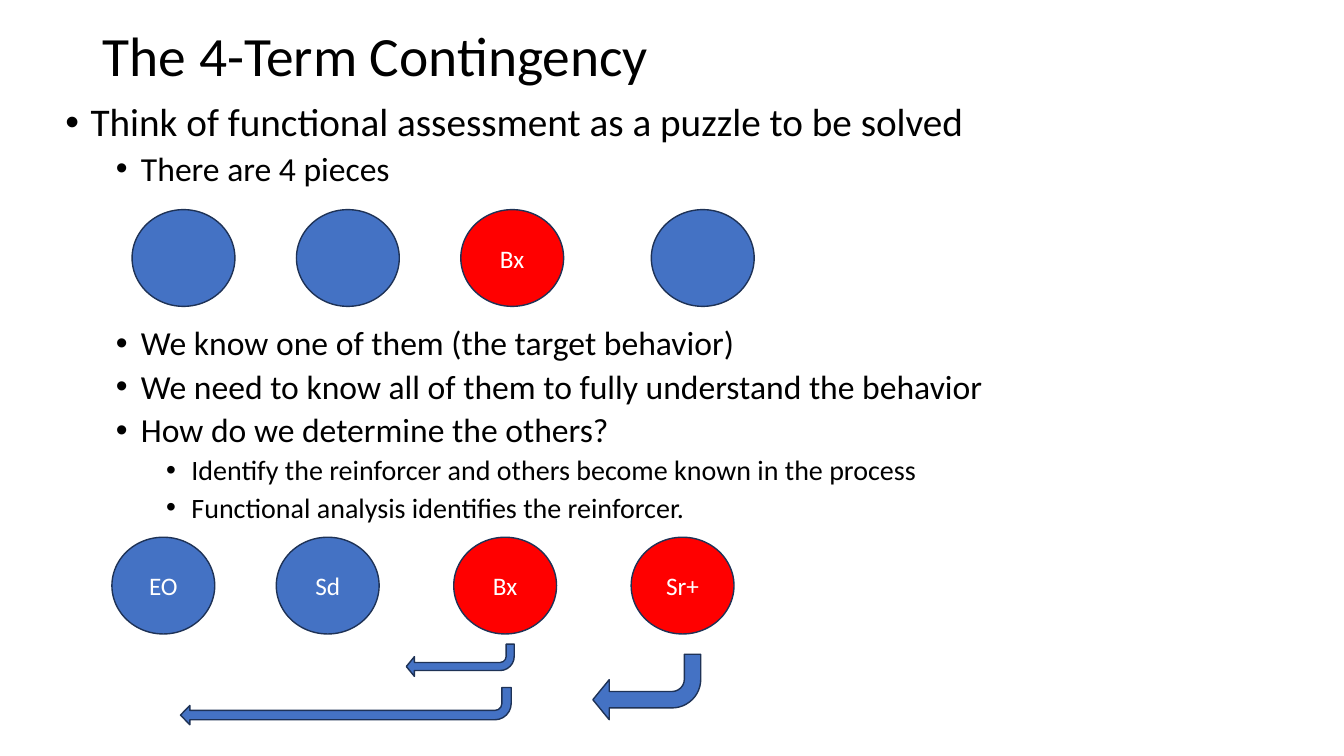
from lxml.etree import SubElement
from pptx import Presentation
from pptx.dml.color import RGBColor
from pptx.enum.shapes import MSO_SHAPE
from pptx.enum.text import MSO_ANCHOR, MSO_AUTO_SIZE, PP_ALIGN
from pptx.oxml.ns import qn
from pptx.util import Inches, Pt

HUES = {"text": "000000", "white": "FFFFFF", "blue": "4472C4",
        "red": "FF0000", "edge": "1E3256"}
SIZES = [28, 24, 20]  # by outline level
GAP = 99  # space before, in points, that clears the upper circles

# level, space before, wording
POINTS = [
    (0, 0, "Think of functional assessment as a puzzle to be solved"),
    (1, 5, "There are 4 pieces"),
    (1, GAP, "We know one of them (the target behavior)"),
    (1, 5, "We need to know all of them to fully understand the behavior"),
    (1, 5, "How do we determine the others?"),
    (2, 5, "Identify the reinforcer and others become known in the process"),
    (2, 5, "Functional analysis identifies the reinforcer."),
]
# offset from the row's left, label, fill
PUZZLE = [(0, "", "blue"), (1.63, "", "blue"), (3.26, "Bx", "red"),
          (5.15, "", "blue")]
SOLVED = [(0, "EO", "blue"), (1.63, "Sd", "blue"), (3.39, "Bx", "red"),
          (5.15, "Sr+", "red")]
# offset from the area's corner, size, second adjustment
ARROWS = [(4.09, 0.1, 1.07, 0.65, 0.306), (2.24, 0, 1.07, 0.32, 0.306),
          (0, 0.43, 3.28, 0.37, 0.26)]


def color(name):
    return RGBColor.from_string(HUES[name])


def add_run(para, text, size, hue):
    run = para.add_run()
    run.text = text
    font = run.font
    font.name, font.size = "Calibri", Pt(size)
    font.color.rgb = color(hue)


def add_title(slide, box):
    title = slide.shapes.title
    title.left, title.top, title.width, title.height = map(Inches, box)
    frame = title.text_frame
    frame.auto_size = MSO_AUTO_SIZE.NONE
    frame.vertical_anchor = MSO_ANCHOR.MIDDLE
    para = frame.paragraphs[0]
    para.alignment, para.line_spacing = PP_ALIGN.LEFT, 0.9
    add_run(para, "The 4-Term Contingency", 39.6, "text")


def add_points(slide, box):
    frame = slide.shapes.add_textbox(*map(Inches, box)).text_frame
    frame.word_wrap = True
    for i, (level, space, text) in enumerate(POINTS):
        para = frame.add_paragraph() if i else frame.paragraphs[0]
        para.level = level
        para.line_spacing, para.space_before = 0.9, Pt(space)
        props = para._p.get_or_add_pPr()
        props.set("marL", str(Inches(0.25 + 0.5 * level)))
        props.set("indent", str(Inches(-0.25)))
        SubElement(props, qn("a:buFont"), typeface="Arial")
        SubElement(props, qn("a:buChar"), char="•")
        add_run(para, text, SIZES[level], "text")


def add_form(slide, kind, box, hue):
    form = slide.shapes.add_shape(kind, *map(Inches, box))
    form.shadow.inherit = False
    form.fill.solid()
    form.fill.fore_color.rgb = color(hue)
    form.line.color.rgb = color("edge")
    form.line.width = Pt(1)
    return form


def add_row(slide, left, top, terms):
    """Draw one row of term circles."""
    for shift, label, hue in terms:
        box = (left + shift, top, 1.02, 0.96)
        form = add_form(slide, MSO_SHAPE.OVAL, box, hue)
        if label:
            frame = form.text_frame
            frame.vertical_anchor = MSO_ANCHOR.MIDDLE
            para = frame.paragraphs[0]
            para.alignment = PP_ALIGN.CENTER
            add_run(para, label, 18, "white")


def add_arrows(slide, left, top):
    for x, y, width, height, head in ARROWS:
        box = (left + x, top + y, width, height)
        form = add_form(slide, MSO_SHAPE.BENT_ARROW, box, "blue")
        form.rotation = 180
        for i, value in enumerate((0.25, head, 0.25, 0.438)):
            form.adjustments[i] = value


def main():
    deck = Presentation()
    deck.slide_width, deck.slide_height = Inches(13.33), Inches(7.5)
    slide = deck.slides.add_slide(deck.slide_layouts[5])
    add_title(slide, (0.92, 0.31, 11.5, 0.55))
    add_points(slide, (0.55, 0.97, 12.42, 6.17))
    add_row(slide, 1.31, 2.08, PUZZLE)
    add_row(slide, 1.11, 5.33, SOLVED)
    add_arrows(slide, 1.79, 6.39)
    deck.save("out.pptx")


if __name__ == "__main__":
    main()
